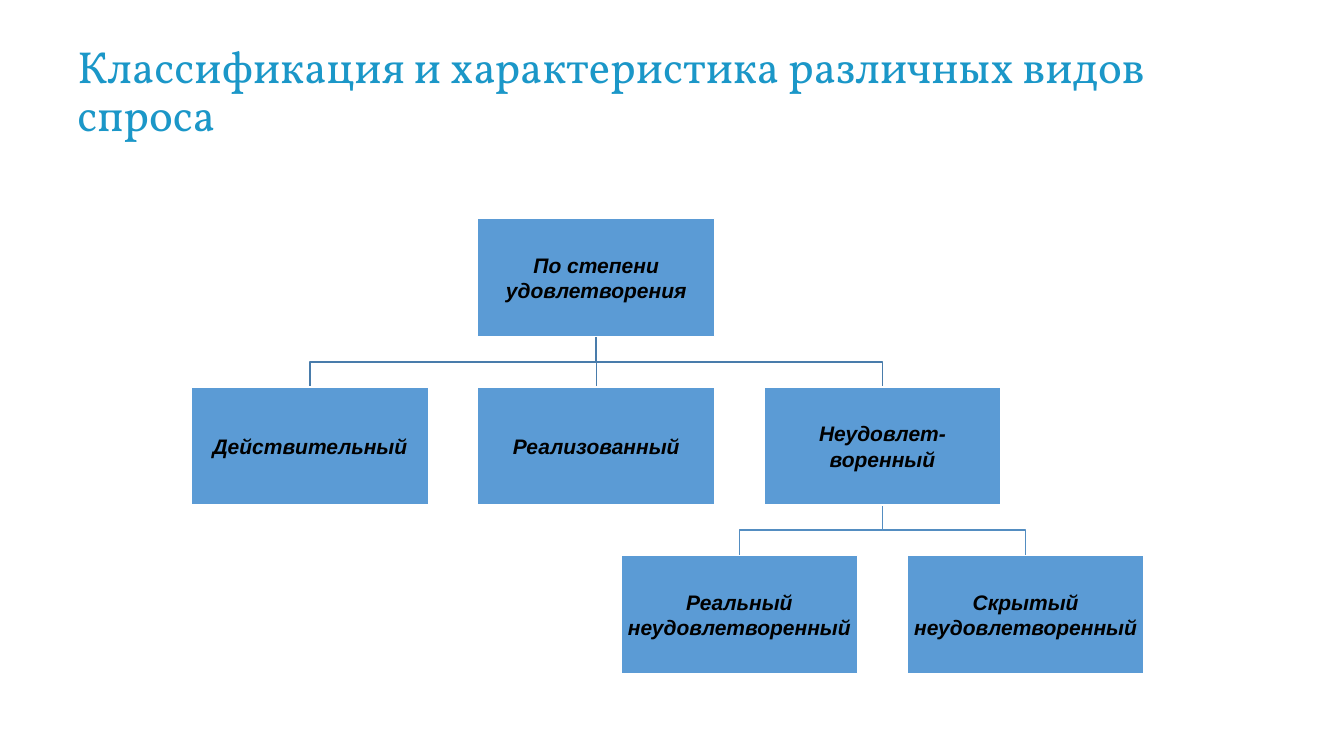
from dataclasses import dataclass

from lxml.etree import SubElement
from pptx import Presentation
from pptx.dml.color import RGBColor
from pptx.enum.shapes import MSO_CONNECTOR, MSO_SHAPE
from pptx.enum.text import MSO_ANCHOR, MSO_AUTO_SIZE, PP_ALIGN
from pptx.oxml.ns import qn
from pptx.util import Pt


@dataclass(frozen=True)
class Theme:
    title_font: str = "Vollkorn"
    title_size: float = 32
    title_color: RGBColor = RGBColor(0x1B, 0x97, 0xC8)
    node_font: str = "Arial"
    node_size: float = 15
    node_text: RGBColor = RGBColor(0, 0, 0)
    node_fill: RGBColor = RGBColor(0x5B, 0x9B, 0xD5)
    node_border: RGBColor = RGBColor(0xFF, 0xFF, 0xFF)
    upper_link: RGBColor = RGBColor(0x49, 0x7C, 0xAB)
    lower_link: RGBColor = RGBColor(0x53, 0x8D, 0xC1)
    line_width: float = 1


@dataclass(frozen=True)
class Box:
    left: float
    top: float
    width: float
    height: float

    @property
    def center(self):
        return self.left + self.width / 2

    @property
    def bottom(self):
        return self.top + self.height


THEME = Theme()
NODE_WIDTH, NODE_HEIGHT = 169.2, 84.24

# Each node: text, column, row, parent
DEMAND_TYPES = {
    "root": ("По степени\nудовлетворения", 1, 0, None),
    "actual": ("Действительный", 0, 1, "root"),
    "realized": ("Реализованный", 1, 1, "root"),
    "unmet": ("Неудовлет-\nворенный", 2, 1, "root"),
    "real": ("Реальный\nнеудовлетворенный", 1.5, 2, "unmet"),
    "hidden": ("Скрытый\nнеудовлетворенный", 2.5, 2, "unmet"),
}


def add_title(slide, box, text):
    title = slide.shapes.title
    title.left, title.top = Pt(box.left), Pt(box.top)
    title.width, title.height = Pt(box.width), Pt(box.height)
    frame = title.text_frame
    frame.text = text
    frame.word_wrap = True
    frame.auto_size = MSO_AUTO_SIZE.NONE
    frame.vertical_anchor = MSO_ANCHOR.MIDDLE
    paragraph = frame.paragraphs[0]
    paragraph.alignment = PP_ALIGN.LEFT
    paragraph.line_spacing = 0.9
    paragraph.font.name = THEME.title_font
    paragraph.font.size = Pt(THEME.title_size)
    paragraph.font.color.rgb = THEME.title_color


def add_link(slide, parent, child, color):
    start_x, start_y = parent.center, parent.bottom
    end_x, end_y = child.center, child.top
    if start_x == end_x:
        link = slide.shapes.add_connector(
            MSO_CONNECTOR.STRAIGHT, Pt(start_x), Pt(start_y), Pt(end_x), Pt(end_y)
        )
    else:
        middle_y = (start_y + end_y) / 2
        builder = slide.shapes.build_freeform(Pt(start_x), Pt(start_y))
        corners = [(start_x, middle_y), (end_x, middle_y), (end_x, end_y)]
        builder.add_line_segments([(Pt(x), Pt(y)) for x, y in corners], close=False)
        link = builder.convert_to_shape()
        link.fill.background()
    link.line.color.rgb = color
    link.line.width = Pt(THEME.line_width)
    SubElement(link._element.spPr, qn("a:effectLst"))


def add_node(slide, box, text):
    node = slide.shapes.add_shape(
        MSO_SHAPE.RECTANGLE, Pt(box.left), Pt(box.top), Pt(box.width), Pt(box.height)
    )
    node.shadow.inherit = False
    node.fill.solid()
    node.fill.fore_color.rgb = THEME.node_fill
    node.line.color.rgb = THEME.node_border
    node.line.width = Pt(THEME.line_width)
    frame = node.text_frame
    frame.text = text
    frame.word_wrap = True
    frame.vertical_anchor = MSO_ANCHOR.MIDDLE
    frame.margin_left = frame.margin_right = Pt(0.75)
    frame.margin_top = frame.margin_bottom = Pt(0.75)
    for paragraph in frame.paragraphs:
        paragraph.alignment = PP_ALIGN.CENTER
        font = paragraph.font
        font.name, font.size = THEME.node_font, Pt(THEME.node_size)
        font.bold = font.italic = True
        font.color.rgb = THEME.node_text


def add_tree(slide, box, nodes):
    # Spread columns and rows evenly over the box
    last_column = max(column for _, column, _, _ in nodes.values())
    last_row = max(row for _, _, row, _ in nodes.values())
    column_step = (box.width - NODE_WIDTH) / last_column
    row_step = (box.height - NODE_HEIGHT) / last_row
    places = {
        name: Box(box.left + column * column_step, box.top + row * row_step,
                  NODE_WIDTH, NODE_HEIGHT)
        for name, (_, column, row, _) in nodes.items()
    }

    # Links lie behind the nodes
    for name, (_, _, row, parent) in nodes.items():
        if parent:
            color = THEME.upper_link if row == 1 else THEME.lower_link
            add_link(slide, places[parent], places[name], color)

    for name, (text, _, _, _) in nodes.items():
        add_node(slide, places[name], text)


def main():
    presentation = Presentation()
    presentation.slide_width, presentation.slide_height = Pt(960), Pt(540)
    slide = presentation.slides.add_slide(presentation.slide_layouts[5])
    add_title(slide, Box(48, 21.6, 864, 90),
              "Классификация и характеристика различных видов спроса")
    add_tree(slide, Box(136.8, 156.24, 680.4, 324.72), DEMAND_TYPES)
    presentation.save("out.pptx")


if __name__ == "__main__":
    main()
